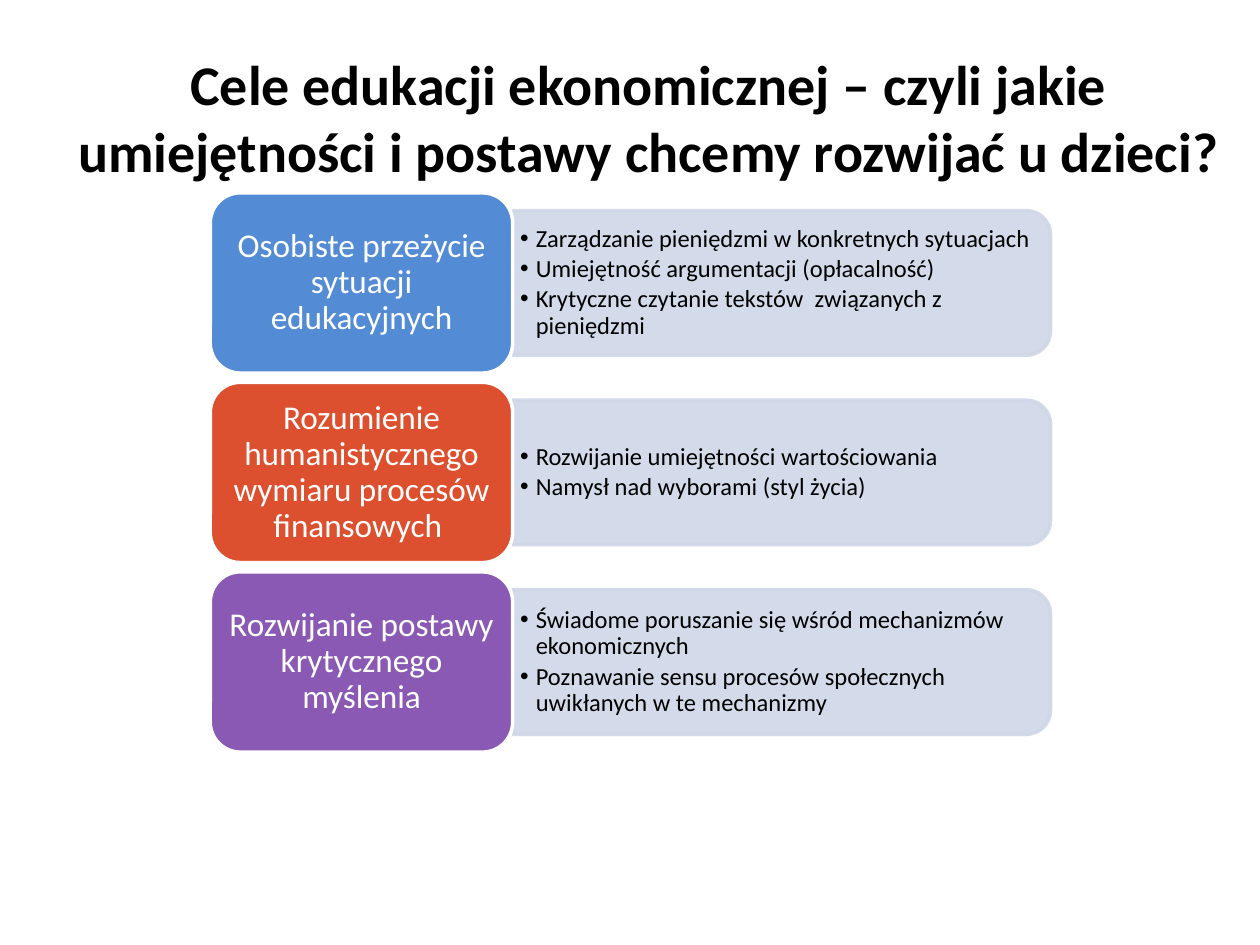
from lxml.etree import SubElement
from pptx import Presentation
from pptx.dml.color import RGBColor
from pptx.enum.shapes import MSO_SHAPE as Preset
from pptx.enum.text import MSO_ANCHOR as Anchor, PP_ALIGN as Align
from pptx.oxml.ns import qn
from pptx.util import Pt

COLORS = {
    "black": "000000", "white": "FFFFFF", "panel": "CFD7E7",
    "blue": "538CD5", "red": "DD502F", "purple": "8A59B3",
}

TITLE = ["Cele edukacji ekonomicznej – czyli jakie",
         "umiejętności i postawy chcemy rozwijać u dzieci?"]

GOALS = [
    ("blue", "Osobiste przeżycie sytuacji edukacyjnych",
     ["Zarządzanie pieniędzmi w konkretnych sytuacjach",
      "Umiejętność argumentacji (opłacalność)",
      "Krytyczne czytanie tekstów  związanych z pieniędzmi"]),
    ("red", "Rozumienie humanistycznego wymiaru procesów finansowych ",
     ["Rozwijanie umiejętności wartościowania",
      "Namysł nad wyborami (styl życia)"]),
    ("purple", "Rozwijanie postawy krytycznego myślenia",
     ["Świadome poruszanie się wśród mechanizmów ekonomicznych",
      "Poznawanie sensu procesów społecznych uwikłanych w te mechanizmy"]),
]

FIRST_TOP, ROW_PITCH = 110.2, 108.3
CARD_LEFT, CARD_WIDTH, CARD_HEIGHT = 120.2, 172.8, 103
CARD_PADDING = 5
PANEL_WIDTH, PANEL_HEIGHT = 307.3, 82.6
LIST_WIDTH, LIST_HEIGHT = 303.2, 74.4
BULLET_INDENT = 9


class SlideBuilder:
    def __init__(self, slide, font="Calibri"):
        self.slide = slide
        self.font = font

    def color(self, name):
        return RGBColor.from_string(COLORS[name])

    def shape(self, preset, left, top, width, height, fill, line, adjustments):
        shape = self.slide.shapes.add_shape(
            preset, Pt(left), Pt(top), Pt(width), Pt(height))
        shape.shadow.inherit = False
        for index, value in enumerate(adjustments):
            shape.adjustments[index] = value
        shape.fill.solid()
        shape.fill.fore_color.rgb = self.color(fill)
        shape.line.color.rgb = self.color(line)
        shape.line.width = Pt(2)
        return shape

    def card(self, left, top, width, height, fill):
        self.shape(Preset.ROUNDED_RECTANGLE, left, top, width, height,
                   fill, "white", [0.167])

    def panel(self, left, top, width, height):
        """Draw a translucent panel rounded on its right side only."""
        shape = self.shape(
            Preset.ROUND_2_SAME_RECTANGLE, left + (width - height) / 2,
            top + (height - width) / 2, height, width,
            "panel", "panel", [0.167, 0])
        shape.rotation = 90
        for color in shape._element.spPr.iter(qn("a:srgbClr")):
            SubElement(color, qn("a:alpha"), val="90000")

    def text_frame(self, left, top, width, height, inset_x, inset_y):
        box = self.slide.shapes.add_textbox(
            Pt(left), Pt(top), Pt(width), Pt(height))
        frame = box.text_frame
        frame.word_wrap = True
        frame.vertical_anchor = Anchor.MIDDLE
        frame.margin_left = frame.margin_right = Pt(inset_x)
        frame.margin_top = frame.margin_bottom = Pt(inset_y)
        return frame

    def run(self, paragraph, text, size, color, bold=False):
        run = paragraph.add_run()
        run.text = text
        run.font.name = self.font
        run.font.size = Pt(size)
        run.font.bold = bold
        run.font.color.rgb = self.color(color)

    def title(self, lines, left, top, width, height):
        frame = self.text_frame(left, top, width, height, 7.2, 3.6)
        paragraph = frame.paragraphs[0]
        paragraph.alignment = Align.CENTER
        for index, line in enumerate(lines):
            if index:
                paragraph.add_line_break()
            self.run(paragraph, line, 32, "black", bold=True)

    def label(self, text, left, top, width, height):
        frame = self.text_frame(left, top, width, height, 5.7, 2.85)
        paragraph = frame.paragraphs[0]
        paragraph.alignment = Align.CENTER
        paragraph.line_spacing = 0.9
        self.run(paragraph, text, 19, "white")

    def bullet_list(self, items, left, top, width, height):
        frame = self.text_frame(left, top, width, height, 4.2, 2.1)
        for index, item in enumerate(items):
            paragraph = frame.add_paragraph() if index else frame.paragraphs[0]
            paragraph.level = 1
            paragraph.line_spacing = 0.9
            if index:
                paragraph.space_before = Pt(2.1)
            self.bullet(paragraph)
            self.run(paragraph, item, 14, "black")

    def bullet(self, paragraph):
        properties = paragraph._p.get_or_add_pPr()
        properties.set("marL", str(Pt(BULLET_INDENT)))
        properties.set("indent", str(-Pt(BULLET_INDENT)))
        color = SubElement(properties, qn("a:buClr"))
        SubElement(color, qn("a:srgbClr"), val=COLORS["black"])
        SubElement(properties, qn("a:buFont"), typeface="Arial")
        SubElement(properties, qn("a:buChar"), char="•")


def main():
    presentation = Presentation()
    presentation.slide_width, presentation.slide_height = Pt(720), Pt(540)
    slide = presentation.slides.add_slide(presentation.slide_layouts[6])
    builder = SlideBuilder(slide)
    builder.title(TITLE, 36, 21.6, 669.6, 90)

    panel_left = CARD_LEFT + CARD_WIDTH
    for row, (color, name, skills) in enumerate(GOALS):
        top = FIRST_TOP + row * ROW_PITCH
        middle = top + CARD_HEIGHT / 2
        builder.panel(panel_left, middle - PANEL_HEIGHT / 2,
                      PANEL_WIDTH, PANEL_HEIGHT)
        builder.bullet_list(skills, panel_left, middle - LIST_HEIGHT / 2,
                            LIST_WIDTH, LIST_HEIGHT)
        builder.card(CARD_LEFT, top, CARD_WIDTH, CARD_HEIGHT, color)
        builder.label(name, CARD_LEFT + CARD_PADDING, top + CARD_PADDING,
                      CARD_WIDTH - 2 * CARD_PADDING,
                      CARD_HEIGHT - 2 * CARD_PADDING)

    presentation.save("out.pptx")


if __name__ == "__main__":
    main()
